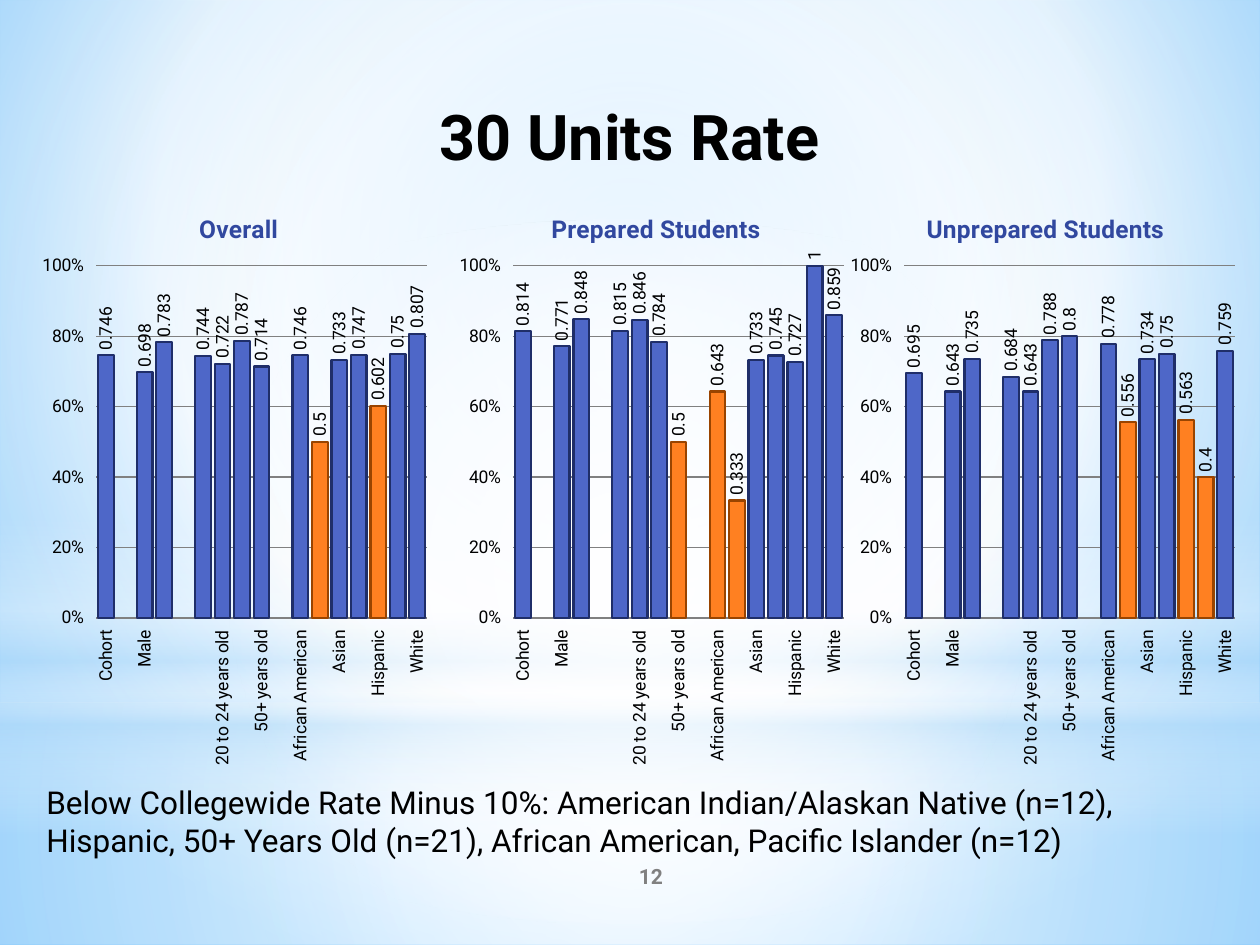
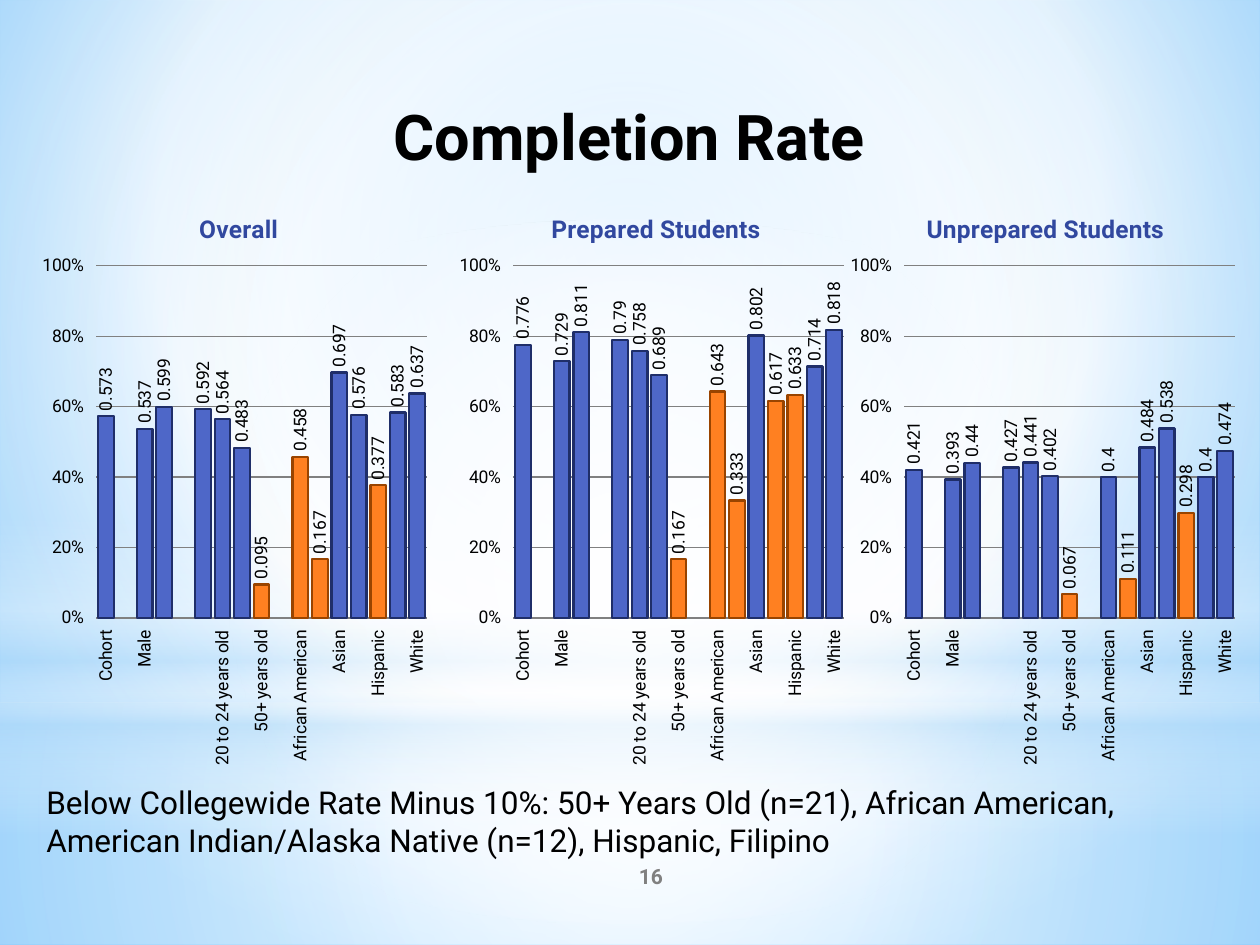
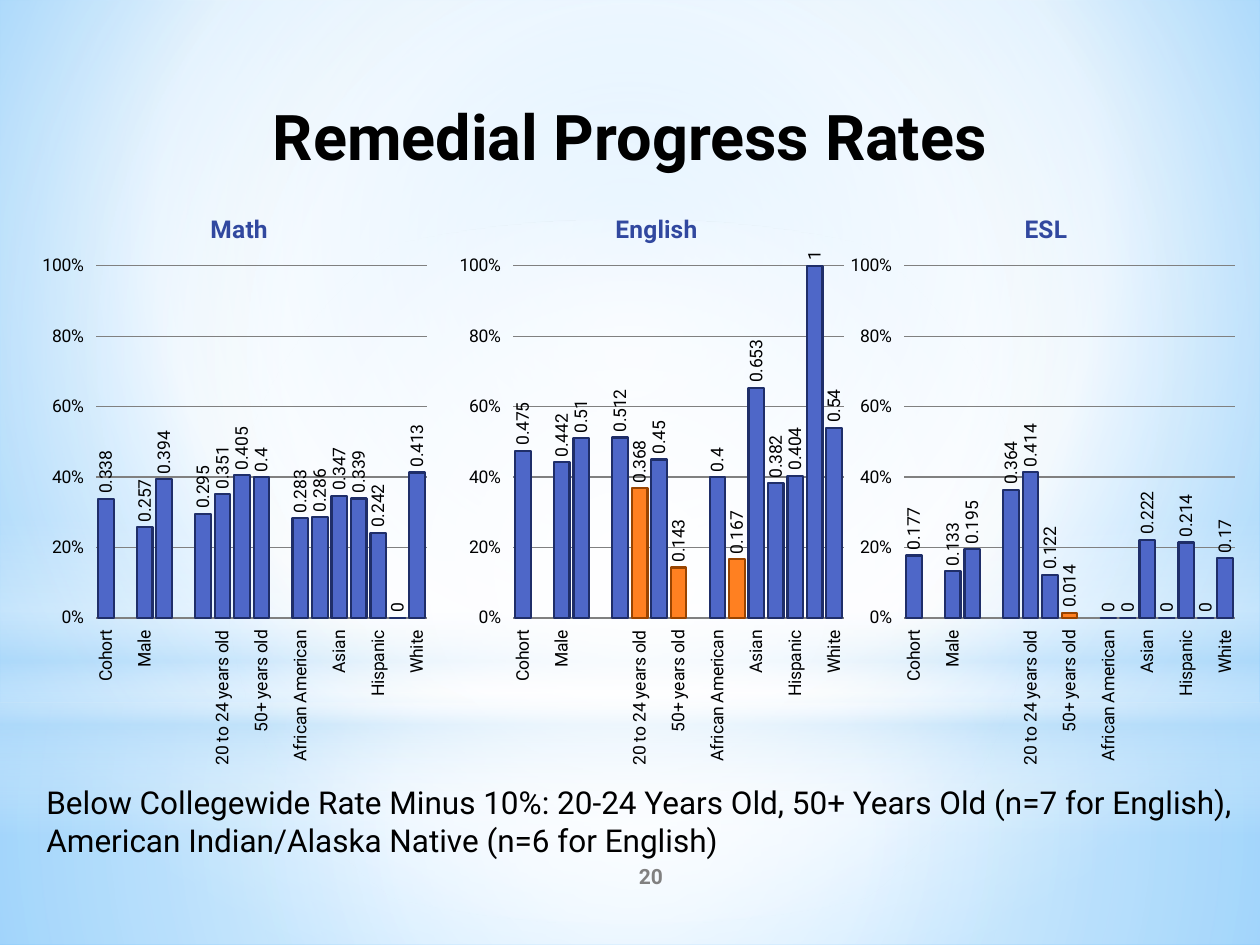
from typing import NamedTuple

from lxml.etree import _Element as Node
from pptx import Presentation
from pptx.chart.chart import Chart
from pptx.chart.data import CategoryChartData
from pptx.dml.fill import FillFormat
from pptx.dml.color import RGBColor
from pptx.enum.chart import XL_CHART_TYPE, XL_LABEL_POSITION, XL_TICK_MARK
from pptx.enum.shapes import MSO_SHAPE
from pptx.enum.text import MSO_ANCHOR, MSO_AUTO_SIZE, PP_ALIGN
from pptx.oxml import parse_xml
from pptx.oxml.ns import nsdecls, qn
from pptx.slide import Slide, SlideMaster
from pptx.text.text import Font
from pptx.util import Emu, Pt

FACE = "Roboto"
HUES = {
    "text": "000000",
    "head": "31489F",
    "page": "808080",
    "grid": "808080",
    "bar": "4E67C8",
    "edge": "1F2E69",
    "low": "FF8021",
    "rim": "994400",
    "white": "FFFFFF",
    "mist": "B4DCFA",
    "sky": "9ED5FF",
    "deep": "5BB9FF",
}
WIDE, HIGH = 1260, 945
GROUPS = (
    ("Cohort",),
    ("Male", "Female"),
    ("< 20 years old", "20 to 24 years old", "25 to 49 years old", "50+ years old"),
    ("African American", "Am Ind/Alaska Native", "Asian", "Filipino", "Hispanic",
     "Pacific Islander", "White"),
)
CATS = [name for group in GROUPS for name in ("", *group)][1:]


class Box(NamedTuple):
    left: int
    top: int
    width: int
    height: int


class Stop(NamedTuple):
    at: int
    hue: str
    alpha: int = 100


class Band(NamedTuple):
    kind: MSO_SHAPE
    box: Box
    stops: tuple[Stop, ...]
    round: bool = True


class Panel(NamedTuple):
    title: str
    inset: int
    rates: tuple[float, ...]


class Page(NamedTuple):
    title: str
    width: int
    panels: tuple[Panel, ...]
    notes: tuple[str, str]
    span: int
    number: int


SPOTS = (Box(34, 181, 401, 597), Box(451, 181, 401, 597), Box(842, 181, 401, 597))
PLOT = Box(62, 85, 331, 352)
CENTRE = (50, 50, 50, 50)
SKY = (Stop(0, "sky"), Stop(60, "white"), Stop(100, "deep"))
BANDS = (
    Band(MSO_SHAPE.RECTANGLE, Box(0, 703, WIDE, 242),
         (Stop(0, "white", 91), Stop(37, "white", 76), Stop(100, "mist", 79))),
    Band(MSO_SHAPE.RECTANGLE, Box(0, 0, WIDE, 703),
         (Stop(0, "white", 89), Stop(48, "white", 62), Stop(100, "mist", 79))),
    Band(MSO_SHAPE.RECTANGLE, Box(0, 519, WIDE, 315),
         (Stop(0, "white", 0), Stop(29, "white", 30), Stop(45, "mist", 40),
          Stop(55, "white", 26), Stop(65, "mist", 60), Stop(100, "white", 0)), False),
    Band(MSO_SHAPE.OVAL, Box(0, 220, WIDE, 703),
         (Stop(0, "white"), Stop(56, "white", 0))),
)
PAGES = (
    Page("30 Units Rate", 425, (
        Panel("Overall", 161, (0.746, 0.698, 0.783, 0.744, 0.722, 0.787, 0.714,
                               0.746, 0.5, 0.733, 0.747, 0.602, 0.75, 0.807)),
        Panel("Prepared Students", 96, (0.814, 0.771, 0.848, 0.815, 0.846, 0.784, 0.5,
                                        0.643, 0.333, 0.733, 0.745, 0.727, 1, 0.859)),
        Panel("Unprepared Students", 80, (0.695, 0.643, 0.735, 0.684, 0.643, 0.788, 0.8,
                                          0.778, 0.556, 0.734, 0.75, 0.563, 0.4, 0.759)),
    ), ("Below Collegewide Rate Minus 10%: American Indian/Alaskan Native (n=12),",
        "Hispanic, 50+ Years Old (n=21), African American, Pacific Islander (n=12)"), 1108, 12),
    Page("Completion Rate", 519, (
        Panel("Overall", 161, (0.573, 0.537, 0.599, 0.592, 0.564, 0.483, 0.095,
                               0.458, 0.167, 0.697, 0.576, 0.377, 0.583, 0.637)),
        Panel("Prepared Students", 96, (0.776, 0.729, 0.811, 0.79, 0.758, 0.689, 0.167,
                                        0.643, 0.333, 0.802, 0.617, 0.633, 0.714, 0.818)),
        Panel("Unprepared Students", 80, (0.421, 0.393, 0.44, 0.427, 0.441, 0.402, 0.067,
                                          0.4, 0.111, 0.484, 0.538, 0.298, 0.4, 0.474)),
    ), ("Below Collegewide Rate Minus 10%: 50+ Years Old (n=21), African American,",
        "American Indian/Alaska Native (n=12), Hispanic, Filipino"), 1108, 16),
    Page("Remedial Progress Rates", 752, (
        Panel("Math", 172, (0.338, 0.257, 0.394, 0.295, 0.351, 0.405, 0.4,
                            0.283, 0.286, 0.347, 0.339, 0.242, 0, 0.413)),
        Panel("English", 160, (0.475, 0.442, 0.51, 0.512, 0.368, 0.45, 0.143,
                               0.4, 0.167, 0.653, 0.382, 0.404, 1, 0.54)),
        Panel("ESL", 178, (0.177, 0.133, 0.195, 0.364, 0.414, 0.122, 0.014,
                           0, 0, 0.222, 0, 0.214, 0, 0.17)),
    ), ("Below Collegewide Rate Minus 10%: 20-24 Years Old, 50+ Years Old (n=7 for English),",
        "American Indian/Alaska Native (n=6 for English)"), 1227, 20),
)


def px(count: int) -> Emu:
    return Emu(round(count * 914400 / 126))


def place(box: Box) -> list[Emu]:
    return [px(side) for side in box]


def tint(fill: FillFormat, hue: str) -> None:
    fill.solid()
    fill.fore_color.rgb = RGBColor.from_string(HUES[hue])


def style(font: Font, size: int, hue: str = "text", bold: bool = False) -> None:
    font.name = FACE
    font.size = Pt(size)
    font.bold = bold
    font.color.rgb = RGBColor.from_string(HUES[hue])


def blend(node: Node, stops: tuple[Stop, ...], focus: tuple[int, ...] | None) -> None:
    marks = "".join(
        f'<a:gs pos="{stop.at * 1000}"><a:srgbClr val="{HUES[stop.hue]}">'
        f'<a:alpha val="{stop.alpha * 1000}"/></a:srgbClr></a:gs>' for stop in stops)
    flow = '<a:lin ang="5400000" scaled="0"/>'
    if focus:
        sides = " ".join(f'{side}="{part * 1000}"' for side, part in zip("ltrb", focus))
        flow = f'<a:path path="circle"><a:fillToRect {sides}/></a:path>'
    node.replace(node.find(qn("a:solidFill")), parse_xml(
        f'<a:gradFill {nsdecls("a")} rotWithShape="1"><a:gsLst>{marks}</a:gsLst>{flow}</a:gradFill>'))


def dress(master: SlideMaster, slide: Slide) -> None:
    master.background.fill.solid()
    blend(next(master.element.iter(qn("p:bgPr"))), SKY, (20, 10, 20, 60))
    for index, band in enumerate(BANDS):
        shape = slide.shapes.add_shape(band.kind, *place(band.box))
        shape.shadow.inherit = False
        shape.line.fill.background()
        shape.fill.solid()
        blend(shape.element.spPr, band.stops, CENTRE if band.round else None)
        shape.element.nvSpPr.cNvPr.set("id", str(20 + index))
        master.shapes.element.append(shape.element)


def write(slide: Slide, box: Box, lines: tuple[str, ...], size: int, hue: str = "text",
          bold: bool = False, align: PP_ALIGN = PP_ALIGN.LEFT, grow: bool = True) -> None:
    frame = slide.shapes.add_textbox(*place(box)).text_frame
    frame.word_wrap = not grow
    frame.auto_size = MSO_AUTO_SIZE.SHAPE_TO_FIT_TEXT if grow else MSO_AUTO_SIZE.NONE
    frame.vertical_anchor = MSO_ANCHOR.TOP if grow else MSO_ANCHOR.MIDDLE
    frame.text = "\n".join(lines)
    for line in frame.paragraphs:
        line.alignment = align
        style(line.runs[0].font, size, hue, bold)


def pin(node: Node, index: int, spot: Box, parts: str) -> None:
    old = node.find(qn("c:layout"))
    if old is not None:
        node.remove(old)
    full = (SPOTS[0].width, SPOTS[0].height) * 2
    sizes = "".join(f'<c:{part} val="{size / whole:.3f}"/>'
                    for part, size, whole in zip(parts, spot, full))
    inner = '<c:layoutTarget val="inner"/>' if "w" in parts else ""
    node.insert(index, parse_xml(
        f'<c:layout {nsdecls("c")}><c:manualLayout>{inner}<c:xMode val="edge"/>'
        f'<c:yMode val="edge"/>{sizes}</c:manualLayout></c:layout>'))


def set_axes(chart: Chart) -> None:
    for axis in (chart.category_axis, chart.value_axis):
        axis.major_tick_mark = XL_TICK_MARK.OUTSIDE
        axis.minor_tick_mark = XL_TICK_MARK.NONE
        axis.format.line.fill.background()
        style(axis.tick_labels.font, 10)
    chart.category_axis.has_major_gridlines = False
    scale = chart.value_axis
    scale.minimum_scale, scale.maximum_scale, scale.major_unit = 0, 1, 0.2
    scale.tick_labels.number_format = "0%"
    scale.tick_labels.number_format_is_linked = False
    scale.has_major_gridlines = True
    tint(scale.major_gridlines.format.line.fill, "grid")
    scale.major_gridlines.format.line.width = Pt(0.75)


def draw(slide: Slide, panel: Panel, box: Box) -> None:
    rates = iter(panel.rates)
    values = [next(rates) if name else None for name in CATS]
    data = CategoryChartData()
    data.categories = CATS
    data.add_series("Series 1", values)
    chart = slide.shapes.add_chart(XL_CHART_TYPE.COLUMN_CLUSTERED, *place(box), data).chart
    style(chart.font, 10)
    chart.has_legend = False
    chart.has_title = True
    title = chart.chart_title
    title.text_frame.text = panel.title
    style(title.text_frame.paragraphs[0].runs[0].font, 14, "head", True)
    title.include_in_layout = False
    pin(title.element, 1, Box(panel.inset, 26, 0, 0), "xy")
    pin(next(chart.element.iter(qn("c:plotArea"))), 0, PLOT, "xywh")
    set_axes(chart)

    plot = chart.plots[0]
    plot.gap_width = 25
    plot.vary_by_categories = False
    plot.has_data_labels = True
    labels = plot.data_labels
    labels.show_value = True
    labels.number_format = "General"
    labels.number_format_is_linked = False
    labels.position = XL_LABEL_POSITION.OUTSIDE_END
    style(labels.font, 10)
    for tag in ("c:catAx", "c:dLbls"):
        body = next(chart.element.iter(qn(tag))).find(qn("c:txPr")).find(qn("a:bodyPr"))
        body.set("rot", "-5400000")
        body.set("vert", "horz")

    bars = plot.series[0]
    bars.invert_if_negative = False
    looks = [(bars.format, "bar", "edge")]
    looks += [(bars.points[index].format, "low", "rim") for index, rate in enumerate(values)
              if rate and rate < values[0] - 0.1]
    for look, hue, edge in looks:
        tint(look.fill, hue)
        tint(look.line.fill, edge)
        look.line.width = Pt(1.25)


def build(slide: Slide, page: Page) -> None:
    write(slide, Box(525, 851, 252, 50), (str(page.number),), 12, "page", True,
          PP_ALIGN.CENTER, False)
    write(slide, Box((WIDE - page.width) // 2, 91, page.width, 89), (page.title,), 36,
          bold=True, align=PP_ALIGN.CENTER)
    for panel, spot in zip(page.panels, SPOTS):
        draw(slide, panel, spot)
    write(slide, Box(34, 777, page.span, 89), page.notes, 18)


def main() -> None:
    deck = Presentation()
    deck.slide_width, deck.slide_height = px(WIDE), px(HIGH)
    for index, page in enumerate(PAGES):
        slide = deck.slides.add_slide(deck.slide_layouts[6])
        if index == 0:
            dress(deck.slide_master, slide)
        build(slide, page)
    deck.save("out.pptx")


if __name__ == "__main__":
    main()
